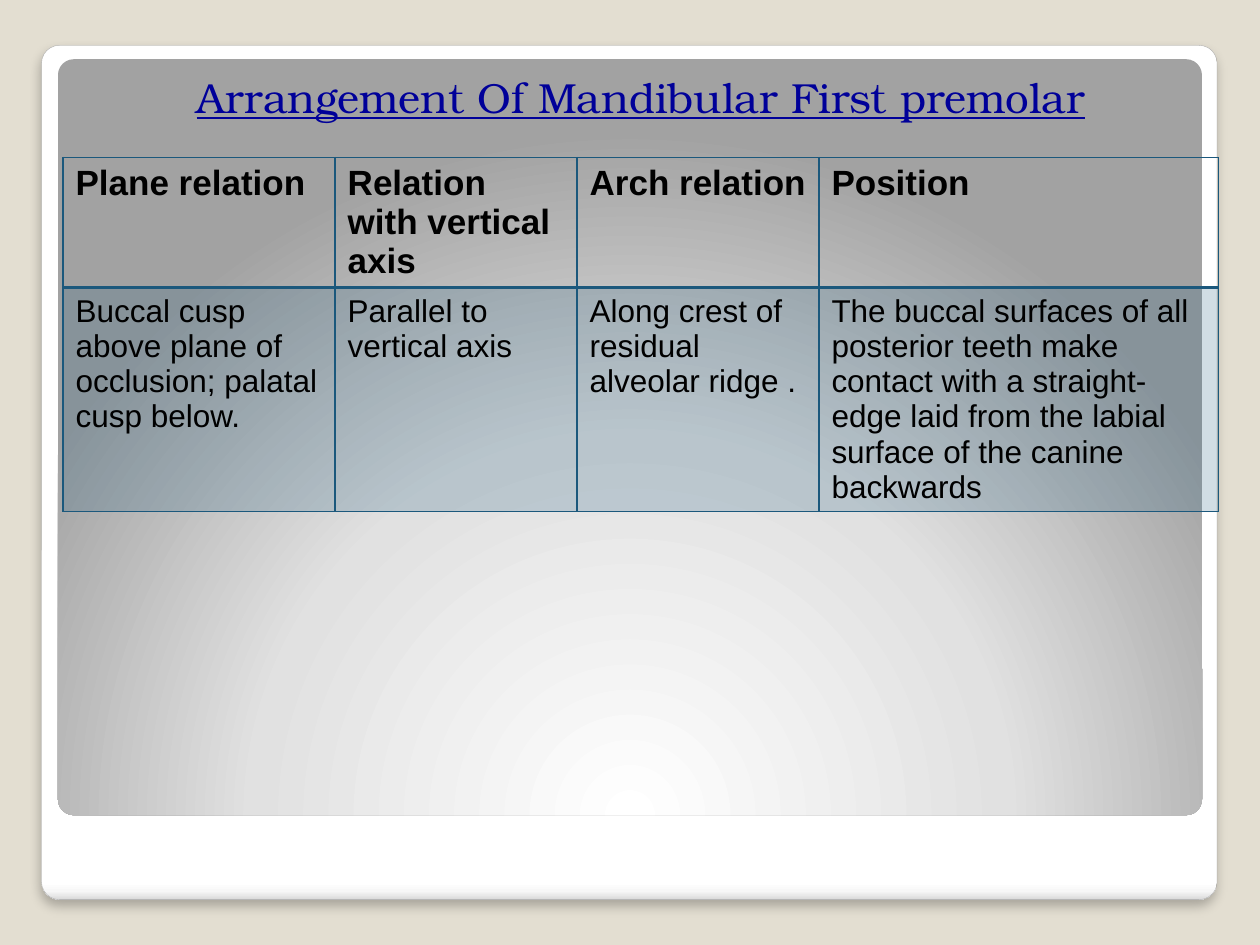
import dataclasses

import lxml.etree
import pptx
import pptx.dml.color
import pptx.enum.shapes
import pptx.enum.text
import pptx.oxml.ns
import pptx.util


@dataclasses.dataclass(frozen=True)
class Theme:
    background: str = "E3DED1"
    accent: str = "1B587C"
    title: str = "000099"
    text: str = "000000"
    outline: str = "A4A4A4"
    title_font: str = "TeX Gyre Bonum"
    body_font: str = "Arial"
    title_size: int = 24
    header_size: int = 20
    body_size: int = 18
    tint: int = 20
    corner: float = 0.021


THEME = Theme()
WIDTH, HEIGHT = 10, 7.5
COLUMNS = [2.16, 1.92, 1.92, 3.17]
ROWS = [0.9, 1.22]
CELLS = [
    ["Plane relation", "Relation with vertical axis", "Arch relation", "Position"],
    [
        "Buccal cusp above plane of occlusion; palatal cusp below.",
        "Parallel to vertical axis",
        "Along crest of residual alveolar ridge .",
        "The buccal surfaces of all posterior teeth make contact with a "
        "straight-edge laid from the labial surface of the canine backwards",
    ],
]


def inches(*lengths):
    return [pptx.util.Inches(length) for length in lengths]


def color(value):
    return pptx.dml.color.RGBColor.from_string(value)


def set_all(target, values):
    for name, value in values.items():
        setattr(target, name, value)


def add_element(parent, tag, **attributes):
    element = lxml.etree.SubElement(parent, pptx.oxml.ns.qn(tag))
    for name, value in attributes.items():
        element.set(name, str(value))
    return element


def add_color(parent, value, alpha=None):
    element = add_element(parent, "a:srgbClr", val=value)
    if alpha is not None:
        add_element(element, "a:alpha", val=alpha * 1000)


def format_font(paragraph, name, size, value, **extra):
    font = paragraph.font
    set_all(font, {"name": name, "size": pptx.util.Pt(size), **extra})
    font.color.rgb = color(value)


def gradient_fill(shape, stops, angle=None, focus=None):
    shape.fill.gradient()
    gradient = shape._element.spPr.find(pptx.oxml.ns.qn("a:gradFill"))
    for child in list(gradient):
        gradient.remove(child)
    stop_list = add_element(gradient, "a:gsLst")
    for position, value in stops:
        add_color(add_element(stop_list, "a:gs", pos=position * 1000), value)
    if focus:
        radial = add_element(gradient, "a:path", path="circle")
        sides = {side: share * 1000 for side, share in zip("ltrb", focus)}
        add_element(radial, "a:fillToRect", **sides)
    else:
        add_element(gradient, "a:lin", ang=angle * 60000, scaled=0)


def add_panel(slide, box, stops, **direction):
    shape = slide.shapes.add_shape(
        pptx.enum.shapes.MSO_SHAPE.ROUNDED_RECTANGLE, *inches(*box)
    )
    shape.adjustments[0] = THEME.corner
    shape.shadow.inherit = False
    shape.line.fill.background()
    gradient_fill(shape, stops, **direction)
    return shape


def add_shadow(shape, value, alpha, blur, distance, angle):
    effects = shape._element.spPr.find(pptx.oxml.ns.qn("a:effectLst"))
    shadow = add_element(
        effects, "a:outerShdw", blurRad=pptx.util.Pt(blur),
        dist=pptx.util.Pt(distance), dir=angle * 60000, rotWithShape=0,
    )
    add_color(shadow, value, alpha)


def set_borders(cell, widths):
    properties = cell._tc.get_or_add_tcPr()
    for index, (side, width) in enumerate(widths.items()):
        line = add_element(properties, "a:ln" + side, w=pptx.util.Pt(width))
        add_color(add_element(line, "a:solidFill"), THEME.accent)
        properties.insert(index, line)


def format_cell(cell, text, is_header):
    cell.text = text
    size = THEME.header_size if is_header else THEME.body_size
    format_font(cell.text_frame.paragraphs[0], THEME.body_font, size, THEME.text,
                bold=is_header)
    if is_header:
        cell.fill.background()
    else:
        cell.fill.solid()
        cell.fill.fore_color.rgb = color(THEME.accent)
        shade = cell._tc.tcPr.find(".//" + pptx.oxml.ns.qn("a:srgbClr"))
        add_element(shade, "a:alpha", val=THEME.tint * 1000)
    divider = {"B": 2} if is_header else {"T": 2}
    set_borders(cell, {"L": 1, "R": 1, "T": 1, "B": 1} | divider)


def add_relation_table(slide):
    frame = slide.shapes.add_table(
        len(ROWS), len(COLUMNS), *inches(0.5, 1.25, sum(COLUMNS), sum(ROWS))
    )
    table = frame.table
    set_all(table, {"first_row": False, "horz_banding": False})
    for column, width in zip(table.columns, COLUMNS):
        column.width = pptx.util.Inches(width)
    for index, (row, height) in enumerate(zip(table.rows, ROWS)):
        row.height = pptx.util.Inches(height)
        for cell, text in zip(row.cells, CELLS[index]):
            format_cell(cell, text, index == 0)


def place_title(slide, text):
    title = slide.shapes.title
    set_all(title, dict(zip(("left", "top", "width", "height"),
                            inches(0.67, 0.17, 8.83, 1.25))))
    frame = title.text_frame
    frame.text = text
    set_all(frame, {
        "auto_size": pptx.enum.text.MSO_AUTO_SIZE.NONE,
        "vertical_anchor": pptx.enum.text.MSO_ANCHOR.BOTTOM,
        "word_wrap": True,
        "margin_bottom": pptx.util.Inches(0.45),
    })
    paragraph = frame.paragraphs[0]
    paragraph.alignment = pptx.enum.text.PP_ALIGN.CENTER
    format_font(paragraph, THEME.title_font, THEME.title_size, THEME.title,
                underline=True, bold=False)
    slide.shapes._spTree.append(title._element)


def main():
    presentation = pptx.Presentation()
    set_all(presentation, dict(zip(("slide_width", "slide_height"),
                                   inches(WIDTH, HEIGHT))))
    slide = presentation.slides.add_slide(presentation.slide_layouts[5])
    slide.background.fill.solid()
    slide.background.fill.fore_color.rgb = color(THEME.background)

    card = add_panel(
        slide, (0.33, 0.36, 9.33, 6.78),
        [(0, "FFFFFF"), (98, "FFFFFF"), (99, "F7F7F7"), (100, "DADADA")], angle=90,
    )
    card.line.color.rgb = color(THEME.outline)
    card.line.width = pptx.util.Pt(0.16)
    add_shadow(card, THEME.text, alpha=25, blur=6, distance=4, angle=90)
    add_panel(
        slide, (0.46, 0.47, 9.08, 6),
        [(0, "FFFFFF"), (55, "E1E1E1"), (100, "A2A2A2")], focus=(50, 175, 50, -75),
    )
    add_relation_table(slide)
    place_title(slide, "Arrangement Of Mandibular First premolar")
    presentation.save("out.pptx")


if __name__ == "__main__":
    main()
